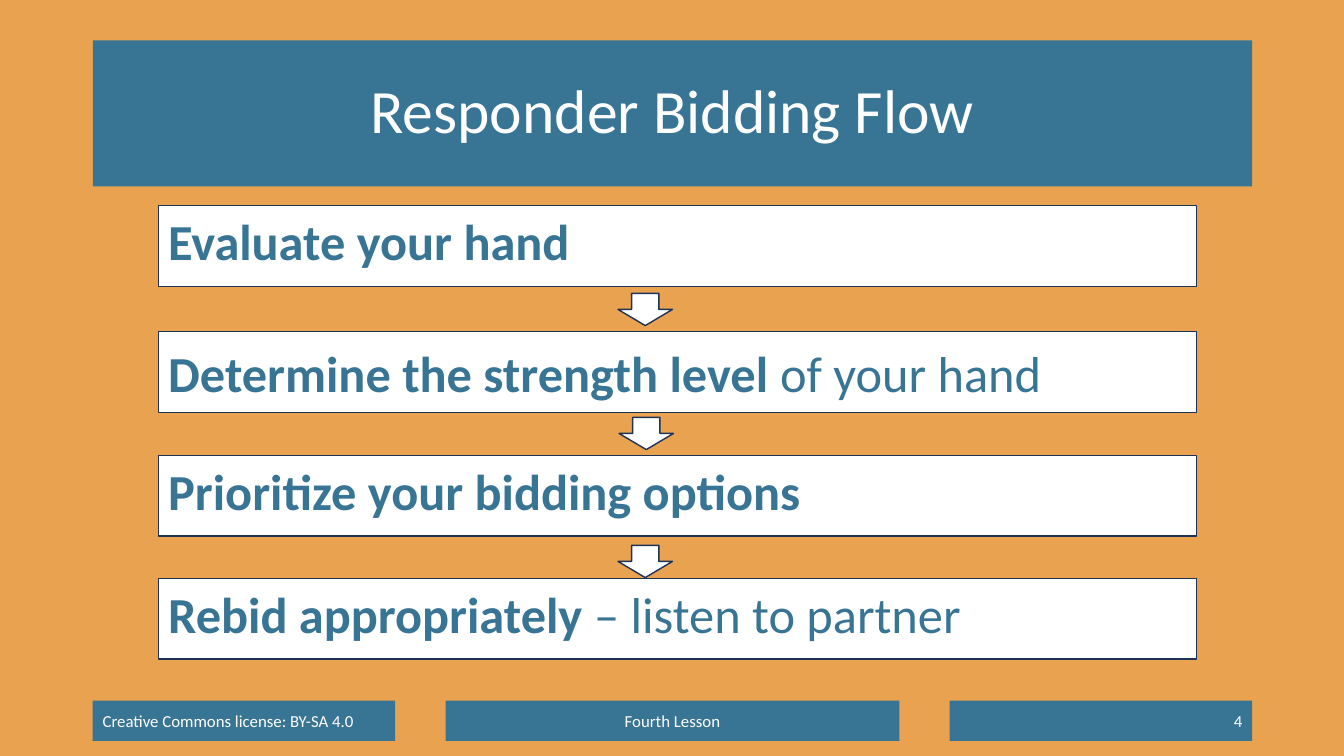
from dataclasses import dataclass

from pptx import Presentation
from pptx.dml.color import RGBColor
from pptx.enum.shapes import MSO_SHAPE
from pptx.enum.text import MSO_ANCHOR, MSO_AUTO_SIZE, PP_ALIGN
from pptx.util import Pt

EMU_PER_PX = 9144
ORANGE, BLUE, NAVY, WHITE = "E9A350", "387494", "1E3256", "FFFFFF"


@dataclass(frozen=True)
class Box:
    left: int
    top: int
    width: int
    height: int


@dataclass(frozen=True)
class FooterBar:
    box: Box
    text: str
    align: PP_ALIGN


@dataclass(frozen=True)
class Step:
    top: int
    bold: str
    plain: str = ""
    anchor: MSO_ANCHOR = MSO_ANCHOR.TOP


FOOTER = [
    FooterBar(Box(92, 695, 300, 40), "Creative Commons license: BY-SA 4.0", PP_ALIGN.LEFT),
    FooterBar(Box(442, 695, 450, 40), "Fourth Lesson", PP_ALIGN.CENTER),
    FooterBar(Box(942, 695, 300, 40), "4", PP_ALIGN.RIGHT),
]
STEPS = [
    Step(204, "Evaluate your hand"),
    Step(329, "Determine the strength level ", "of your hand", MSO_ANCHOR.MIDDLE),
    Step(452, "Prioritize your bidding options"),
    Step(574, "Rebid appropriately ", "– listen to partner"),
]
ARROWS = [Box(613, 291, 54, 32), Box(614, 414, 54, 32), Box(613, 541, 54, 32)]


def px(n: int) -> int:
    return n * EMU_PER_PX


def paint(fill, color: str) -> None:
    fill.solid()
    fill.fore_color.rgb = RGBColor.from_string(color)


def place(sp, box: Box) -> None:
    for name in ("left", "top", "width", "height"):
        setattr(sp, name, px(getattr(box, name)))


def add_block(s, kind: MSO_SHAPE, box: Box, fill: str, line: str | None = None):
    sp = s.shapes.add_shape(kind, 0, 0, 0, 0)
    place(sp, box)
    sp.shadow.inherit = False
    paint(sp.fill, fill)
    if line:
        paint(sp.line.fill, line)
        sp.line.width = Pt(1)
    else:
        sp.line.fill.background()
    return sp


def write(sp, runs: list[tuple[str, bool]], size: int, color: str,
          align: PP_ALIGN = PP_ALIGN.LEFT, anchor: MSO_ANCHOR = MSO_ANCHOR.MIDDLE) -> None:
    tf = sp.text_frame
    frame_format = {"word_wrap": True, "auto_size": MSO_AUTO_SIZE.NONE, "vertical_anchor": anchor}
    for name, value in frame_format.items():
        setattr(tf, name, value)
    p = tf.paragraphs[0]
    p.alignment = align
    for text, bold in runs:
        r = p.add_run()
        r.text = text
        for name, value in {"name": "Calibri", "size": Pt(size), "bold": bold}.items():
            setattr(r.font, name, value)
        paint(r.font.fill, color)


def main() -> None:
    prs = Presentation()
    prs.slide_width, prs.slide_height = px(1333), px(750)
    s = prs.slides.add_slide(prs.slide_layouts[5])
    paint(s.background.fill, ORANGE)

    title = s.shapes.title
    place(title, Box(92, 40, 1150, 145))
    paint(title.fill, BLUE)
    write(title, [("Responder Bidding Flow", False)], 44, WHITE, PP_ALIGN.CENTER)
    title.text_frame.paragraphs[0].line_spacing = 0.9

    for bar in FOOTER:
        sp = add_block(s, MSO_SHAPE.RECTANGLE, bar.box, BLUE)
        write(sp, [(bar.text, False)], 12, WHITE, bar.align)

    for step in STEPS:
        sp = add_block(s, MSO_SHAPE.RECTANGLE, Box(157, step.top, 1030, 80), WHITE, NAVY)
        runs = [(text, bold) for text, bold in ((step.bold, True), (step.plain, False)) if text]
        write(sp, runs, 36, BLUE, anchor=step.anchor)

    for box in ARROWS:
        add_block(s, MSO_SHAPE.DOWN_ARROW, box, WHITE, NAVY)

    prs.save("out.pptx")


if __name__ == "__main__":
    main()
